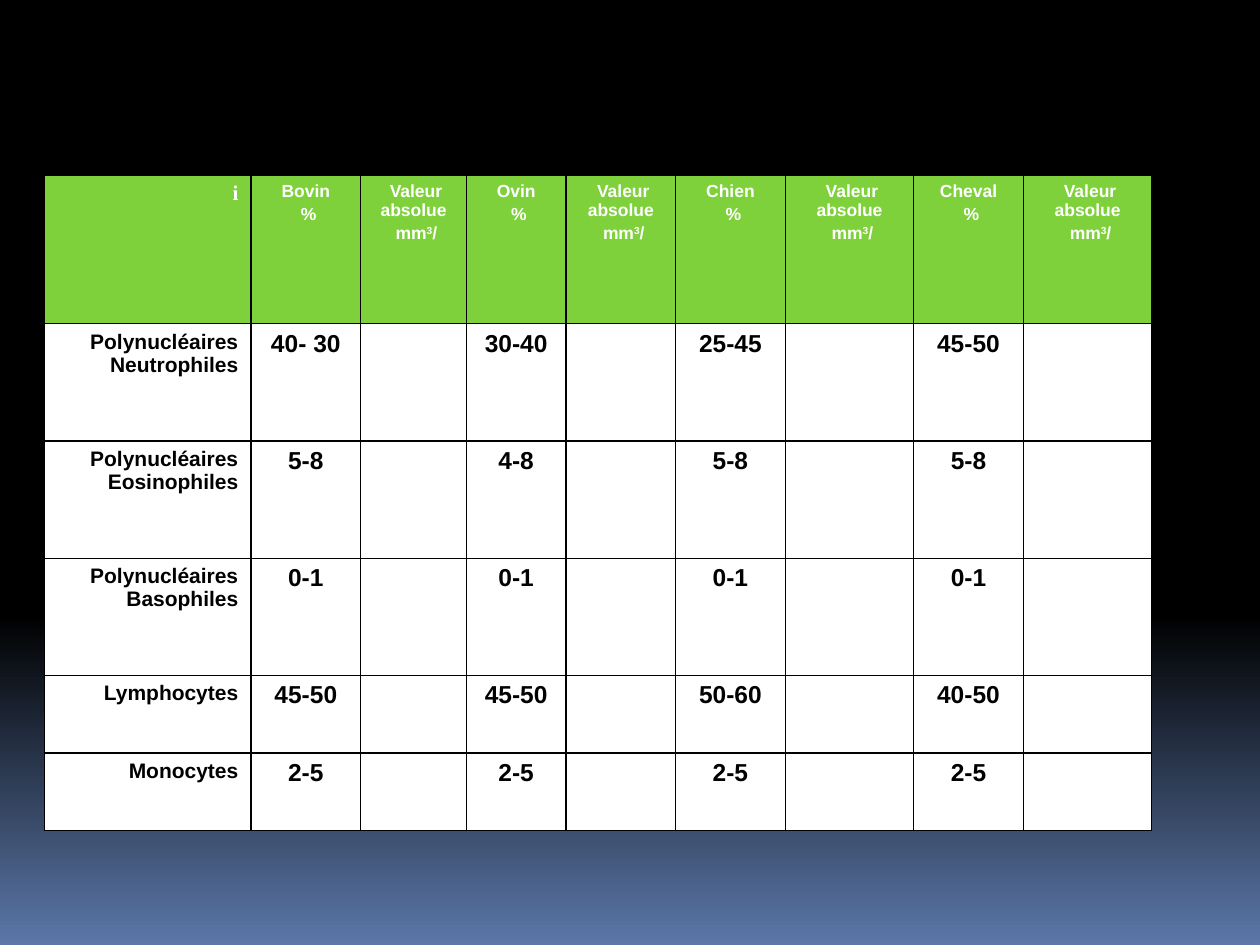
from pptx import Presentation
from pptx.util import Cm, Pt
from pptx.dml.color import RGBColor
from pptx.enum.text import PP_ALIGN
from pptx.oxml import parse_xml
from pptx.oxml.ns import qn
from lxml.etree import SubElement

NS = "http://schemas.openxmlformats.org/drawingml/2006/main"
SANS, SERIF = "Arial", "Times New Roman"
WIDTHS = [4.17, 2.21, 2.13, 2.01, 2.21, 2.21, 2.59, 2.21, 2.59]
HEIGHTS = [3, 2.36, 2.36, 2.36, 1.57, 1.57]
SPECIES = ["Bovin", "Ovin", "Chien", "Cheval"]
ROWS = [
    ["Polynucléaires Neutrophiles ", "30 -40", "30-40", "25-45", "45-50"],
    ["Polynucléaires Eosinophiles ", "5-8", "4-8", "5-8", "5-8"],
    ["Polynucléaires Basophiles ", "0-1", "0-1", "0-1", "0-1"],
    ["Lymphocytes ", "45-50", "45-50", "50-60", "40-50"],
    ["Monocytes ", "2-5", "2-5", "2-5", "2-5"],
]


def tint(code):
    return RGBColor.from_string(code)


def style(run, size, face, color):
    font = run.font
    font.size, font.name, font.bold = Pt(size), face, True
    font.color.rgb = tint(color)
    SubElement(run._r.get_or_add_rPr(), qn("a:cs"), typeface=SANS)


def align(para, side):
    para.alignment = side
    para._p.get_or_add_pPr().set("rtl", "1")


def write(cell, text, size, face, color, side=PP_ALIGN.CENTER):
    cell.text_frame.text = text
    for para in cell.text_frame.paragraphs:
        align(para, side)
        for run in para.runs:
            style(run, size, face, color)


def append(para, text, size, face, color):
    run = para.add_run()
    run.text = text
    style(run, size, face, color)
    return run


def paint(cell, color):
    cell.fill.solid()
    cell.fill.fore_color.rgb = tint(color)
    props = cell._tc.get_or_add_tcPr()
    for spot, side in enumerate("LRTB"):
        props.insert(spot, parse_xml(
            f'<a:ln{side} xmlns:a="{NS}" w="9525"><a:solidFill>'
            f'<a:srgbClr val="000000"/></a:solidFill></a:ln{side}>'))


def draw_head(table):
    white = "FFFFFF"
    write(table.cell(0, 0), "i", 12, SERIF, white, PP_ALIGN.RIGHT)
    for i, name in enumerate(SPECIES):
        share, count = table.cell(0, 2 * i + 1), table.cell(0, 2 * i + 2)
        write(share, name + "\v%", 10, SANS, white)
        write(count, "Valeur \nabsolue\n/mm", 10, SANS, white)
        power = append(count.text_frame.paragraphs[-1], "3", 10, SANS, white)
        power.font._element.set("baseline", "30000")
        for cell in (share, count):
            append(cell.text_frame.paragraphs[-1], " ", 12, SERIF, white)


def draw_body(table):
    for r, (label, *values) in enumerate(ROWS, 1):
        write(table.cell(r, 0), label, 12, SANS, "000000", PP_ALIGN.RIGHT)
        for i, value in enumerate(values):
            face = SANS if i else SERIF
            write(table.cell(r, 2 * i + 1), value, 14, face, "000000")


def draw_table(slide, left, top):
    frame = slide.shapes.add_table(
        len(HEIGHTS), len(WIDTHS), Cm(left), Cm(top),
        Cm(sum(WIDTHS)), Cm(sum(HEIGHTS)))
    table = frame.table
    table.horz_banding = False
    for col, width in zip(table.columns, WIDTHS):
        col.width = Cm(width)
    for r, (row, height) in enumerate(zip(table.rows, HEIGHTS)):
        row.height = Cm(height)
        for cell in row.cells:
            paint(cell, "FFFFFF" if r else "7FD13B")
    draw_head(table)
    draw_body(table)


def draw_back(slide):
    fill = slide.background.fill
    fill.gradient()
    fill.gradient_angle = 270
    for stop, (place, color) in zip(
            fill.gradient_stops, [(0.65, "000000"), (1, "5B77A8")]):
        stop.position = place
        stop.color.rgb = tint(color)


def main():
    deck = Presentation()
    deck.slide_width, deck.slide_height = Cm(25.4), Cm(19.05)
    slide = deck.slides.add_slide(deck.slide_layouts[6])
    draw_back(slide)
    draw_table(slide, 0.89, 3.53)
    deck.save("out.pptx")


if __name__ == "__main__":
    main()
